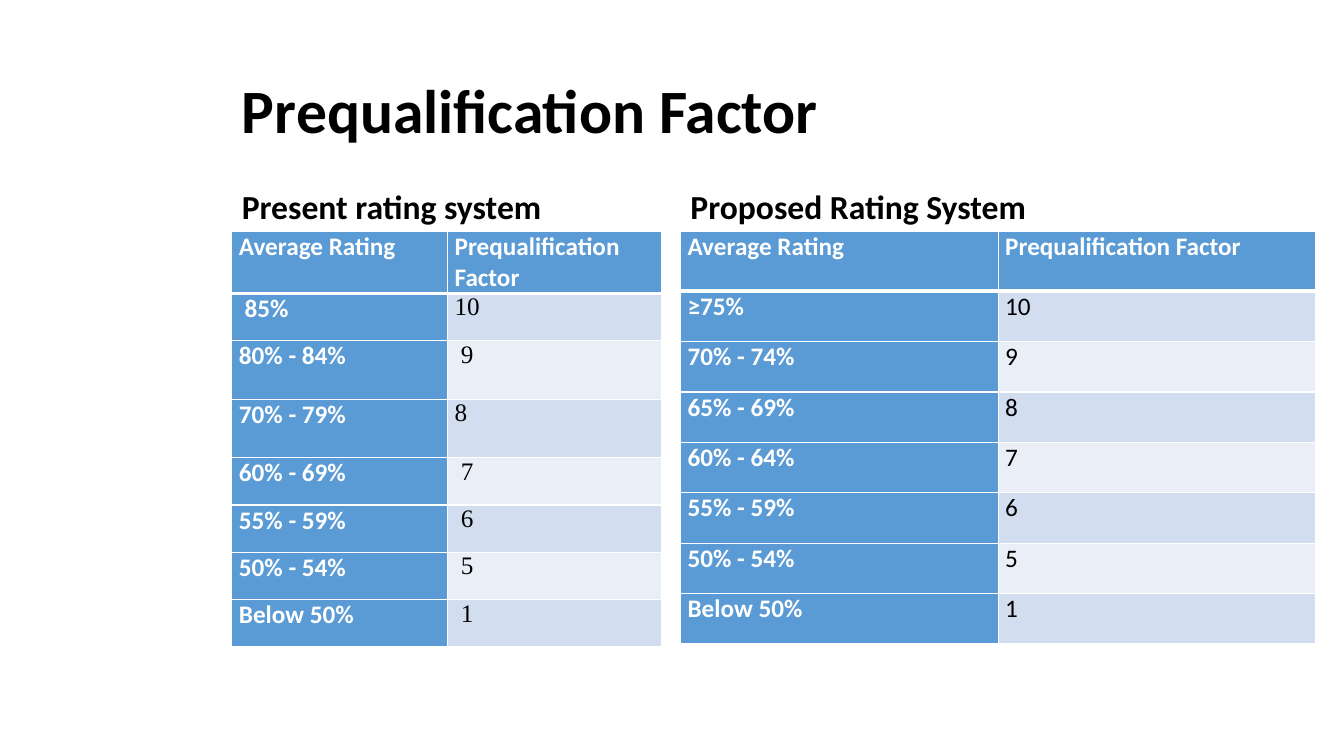
from dataclasses import dataclass

from lxml import etree
from pptx import Presentation
from pptx.dml.color import RGBColor
from pptx.enum.text import MSO_ANCHOR, MSO_AUTO_SIZE, PP_ALIGN
from pptx.oxml.ns import qn
from pptx.util import Emu, Pt

LEFT = PP_ALIGN.LEFT
MIDDLE, BOTTOM = MSO_ANCHOR.MIDDLE, MSO_ANCHOR.BOTTOM
NO_FIT = MSO_AUTO_SIZE.NONE
SCALE = 9144  # EMU per px, 100 px to the inch
SANS, SERIF = "Calibri", "Times New Roman"
BLACK, WHITE, BLUE = "000000", "FFFFFF", "5B9BD5"
BANDS = ("D2DEEF", "EAEFF7")
HEADS = ("Average Rating", "Prequalification Factor")


@dataclass
class Rating:
    title: str
    left: int
    width: int  # of the heading box
    cols: tuple[int, ...]
    heights: tuple[int, ...]
    font: str  # of the factor column
    rows: tuple[tuple[str, str], ...]


RATINGS = (
    Rating("Present rating system", 230, 426, (214, 212),
           (58, 47, 58, 58, 47, 47, 47, 47), SERIF,
           ((" 85%", "10"), ("80% - 84%", " 9"), ("70% - 79%", "8"),
            ("60% - 69%", " 7"), ("55% - 59%", " 6"),
            ("50% - 54%", " 5"), ("Below 50%", " 1"))),
    Rating("Proposed Rating System", 675, 567, (315, 315),
           (59,) + (50,) * 7, SANS,
           (("≥75%", "10"), ("70% - 74%", "9"), ("65% - 69%", "8"),
            ("60% - 64%", "7"), ("55% - 59%", "6"),
            ("50% - 54%", "5"), ("Below 50%", "1"))),
)


def px(size: int) -> Emu:
    return Emu(size * SCALE)


def tint(code: str) -> RGBColor:
    return RGBColor.from_string(code)


def apply(item, **form) -> None:
    for key, value in form.items():
        setattr(item, key, value)


def style(para, size: int, color: str, bold: bool, font: str) -> None:
    para.alignment = LEFT
    apply(para.font, size=Pt(size), bold=bold, name=font)
    para.font.color.rgb = tint(color)


def label(shape, text: str, size: int, anchor) -> None:
    frame = shape.text_frame
    apply(frame, text=text, word_wrap=True, auto_size=NO_FIT,
          vertical_anchor=anchor)
    para = frame.paragraphs[0]
    style(para, size, BLACK, True, SANS)
    para.line_spacing = 0.9


def edge(cell, side: str, width: int) -> None:
    line = etree.SubElement(cell._tc.get_or_add_tcPr(), qn(f"a:ln{side}"),
                            w=str(Pt(width)))
    fill = etree.SubElement(line, qn("a:solidFill"))
    etree.SubElement(fill, qn("a:srgbClr"), val=WHITE)


def draw(slide, rating: Rating) -> None:
    # Heading
    box = slide.shapes.add_textbox(px(rating.left), px(140),
                                   px(rating.width), px(90))
    label(box, rating.title, 24, BOTTOM)

    # Table
    grid = (HEADS,) + rating.rows
    table = slide.shapes.add_table(
        len(grid), len(HEADS), px(rating.left), px(230),
        px(sum(rating.cols)), px(sum(rating.heights))).table
    for col, width in zip(table.columns, rating.cols):
        col.width = px(width)
    for row, height in zip(table.rows, rating.heights):
        row.height = px(height)

    # Cells
    for r, texts in enumerate(grid):
        for c, text in enumerate(texts):
            cell = table.cell(r, c)
            key = r == 0 or c == 0
            apply(cell, text=text, margin_left=px(7), margin_right=px(7),
                  margin_top=0, margin_bottom=0)
            style(cell.text_frame.paragraphs[0], 18,
                  WHITE if key else BLACK, key,
                  SANS if key else rating.font)
            for side in "LRTB":
                thick = (r, side) in ((0, "B"), (1, "T"))
                edge(cell, side, 3 if thick else 1)
            cell.fill.solid()
            cell.fill.fore_color.rgb = tint(
                BLUE if key else BANDS[(r - 1) % 2])


def main() -> None:
    deck = Presentation()
    apply(deck, slide_width=px(1333), slide_height=px(750))
    slide = deck.slides.add_slide(deck.slide_layouts[5])

    # Title
    title = slide.shapes.title
    apply(title, left=px(230), top=px(40), width=px(1012), height=px(145))
    label(title, "Prequalification Factor", 44, MIDDLE)

    # Rating systems
    for rating in RATINGS:
        draw(slide, rating)
    deck.save("out.pptx")


if __name__ == "__main__":
    main()
